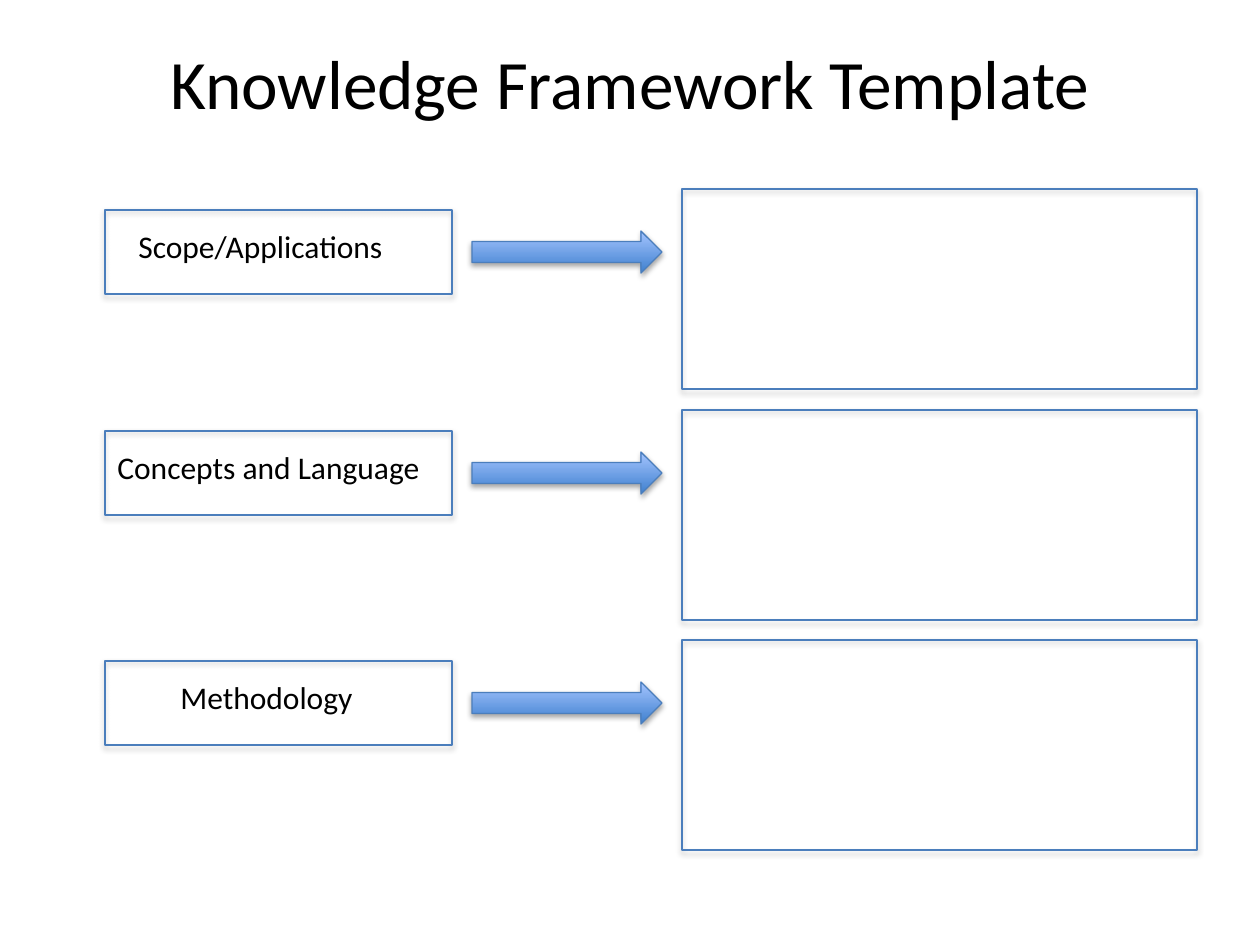
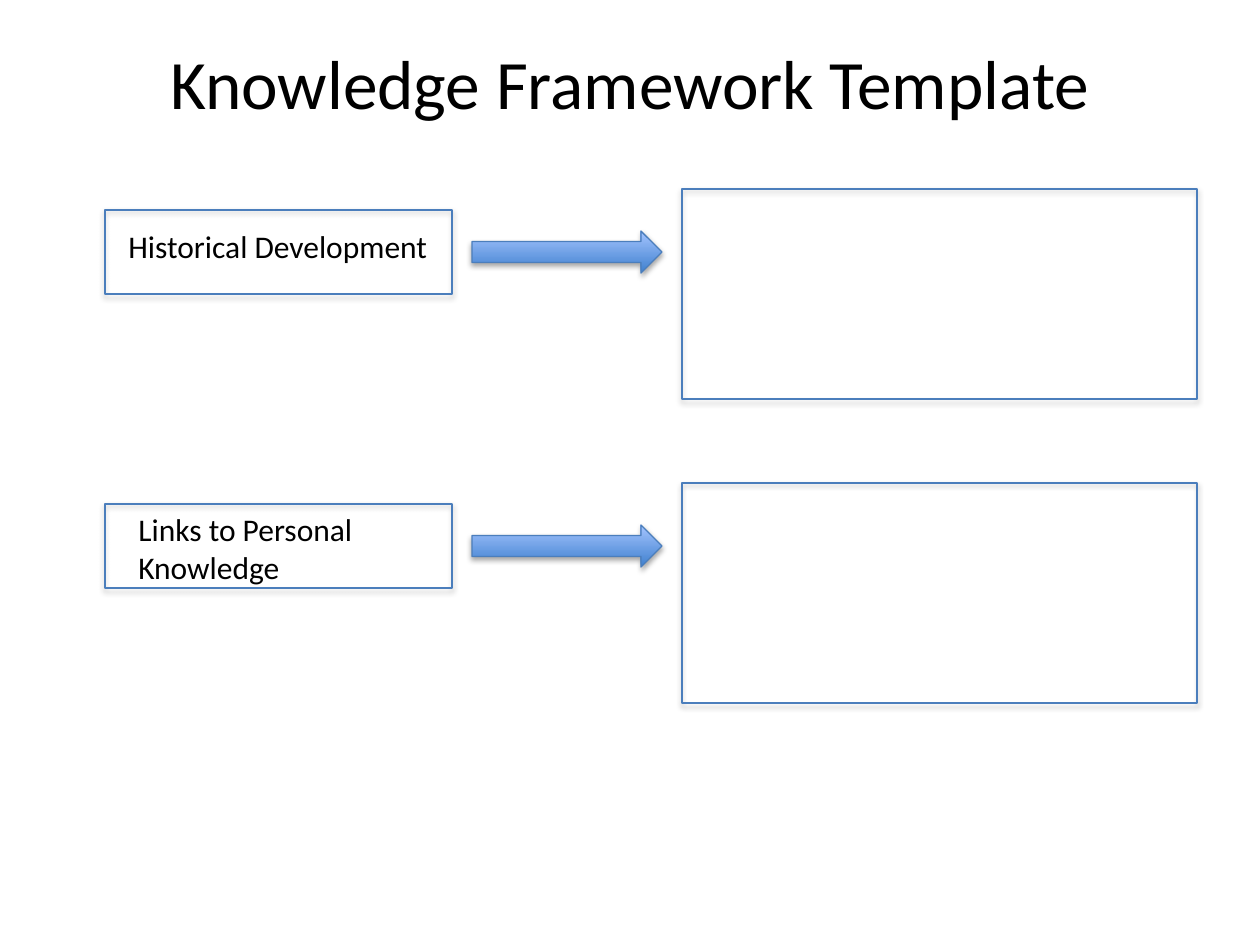
from lxml import etree
from pptx import Presentation
from pptx.dml.color import RGBColor
from pptx.enum.shapes import MSO_SHAPE as Shape
from pptx.enum.text import MSO_ANCHOR as Anchor, MSO_AUTO_SIZE as Fit, PP_ALIGN as Align
from pptx.oxml.ns import qn
from pptx.util import Emu, Pt

TITLE = "Knowledge Framework Template"
# Each row: answer box top and height, label, label left, width, height and drop
SLIDES = [
    [
        (189, 200, "Scope/Applications", 126, 315, 50, 32),
        (410, 210, "Concepts and Language", 105, 368, 50, 32),
        (640, 210, "Methodology", 168, 315, 50, 32),
    ],
    [
        (189, 210, "Historical Development", 116, 368, 50, 32),
        (483, 220, "Links to Personal Knowledge", 126, 315, 89, 21),
    ],
]
FONT, INK, EDGE = "Calibri", "000000", "4B7EBC"
SHADES = ["3F80CE", "A4C4FF"]
SCALE = 914400 / 126


def px(*nums):
    return [Emu(round(n * SCALE)) for n in nums]


def color(code):
    return RGBColor.from_string(code)


def style(para, size):
    para.font.name, para.font.size = FONT, Pt(size)
    para.font.color.rgb = color(INK)


def cast(shape):
    """Give the shape a soft shadow straight below it."""
    shape.shadow.inherit = False
    effects = shape._element.spPr.find(qn("a:effectLst"))
    shade = etree.SubElement(effects, qn("a:outerShdw"), blurRad="40000",
                             dist="23000", dir="5400000", rotWithShape="0")
    tint = etree.SubElement(shade, qn("a:srgbClr"), val=INK)
    etree.SubElement(tint, qn("a:alpha"), val="35000")


def outline(slide, kind, *box):
    shape = slide.shapes.add_shape(kind, *px(*box))
    shape.fill.background()
    shape.line.color.rgb = color(EDGE)
    shape.line.width = Pt(0.75)
    cast(shape)
    return shape


def add_title(slide):
    title = slide.shapes.title
    title.left, title.top, title.width, title.height = px(63, 38, 1134, 88)
    frame = title.text_frame
    frame.text = TITLE
    frame.auto_size = Fit.NONE
    frame.vertical_anchor = Anchor.MIDDLE
    frame.paragraphs[0].alignment = Align.CENTER
    style(frame.paragraphs[0], 39.6)


def add_row(slide, top, height, label, left, width, tall, drop):
    outline(slide, Shape.FLOWCHART_PROCESS, 105, top + 21, 347, 84)
    arrow = outline(slide, Shape.RIGHT_ARROW, 472, top + 42, 190, 42)
    arrow.fill.gradient()
    arrow.fill.gradient_angle = 90
    for stop, code in zip(arrow.fill.gradient_stops, SHADES):
        stop.color.rgb = color(code)
    outline(slide, Shape.FLOWCHART_PROCESS, 682, top, 515, height)

    frame = slide.shapes.add_textbox(*px(left, top + drop, width, tall)).text_frame
    frame.word_wrap = True
    frame.auto_size = Fit.SHAPE_TO_FIT_TEXT
    frame.text = label
    style(frame.paragraphs[0], 18)


def main():
    deck = Presentation()
    deck.slide_width, deck.slide_height = px(1260, 945)
    for rows in SLIDES:
        slide = deck.slides.add_slide(deck.slide_layouts[5])
        add_title(slide)
        for row in rows:
            add_row(slide, *row)
    deck.save("out.pptx")


if __name__ == "__main__":
    main()
